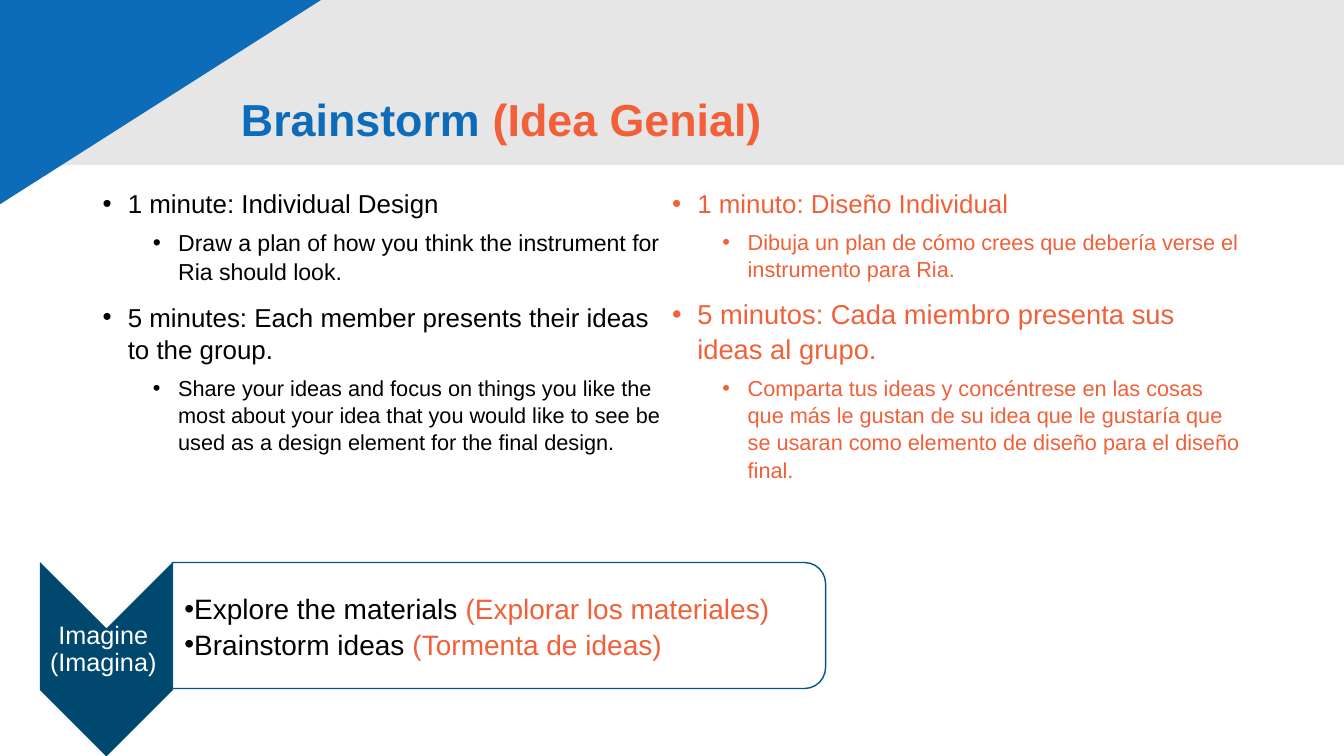
"""Build the bilingual brainstorm slide."""
from dataclasses import dataclass

from lxml import etree
from pptx import Presentation
from pptx.dml.color import RGBColor
from pptx.enum.shapes import MSO_SHAPE
from pptx.enum.text import MSO_ANCHOR, PP_ALIGN
from pptx.oxml.ns import qn
from pptx.util import Pt

CHEVRON = MSO_SHAPE.CHEVRON
PANEL = MSO_SHAPE.ROUND_2_SAME_RECTANGLE
RECT = MSO_SHAPE.RECTANGLE
LEFT, CENTER = PP_ALIGN.LEFT, PP_ALIGN.CENTER
TOP, MIDDLE = MSO_ANCHOR.TOP, MSO_ANCHOR.MIDDLE


@dataclass(frozen=True)
class Theme:
    """Colours, font and type sizes."""
    font: str = "Arial"
    blue: str = "0D6CB9"
    orange: str = "F16038"
    navy: str = "00486E"
    edge: str = "005786"
    gray: str = "E7E6E6"
    black: str = "000000"
    white: str = "FFFFFF"
    title: float = 32
    label: float = 18
    task: float = 20


THEME = Theme()

TITLE = [("Brainstorm ", THEME.blue), ("(Idea Genial)", THEME.orange)]
STEPS = [
    (THEME.black, [
        (0, 18.5, "1 minute: Individual Design"),
        (1, 16.5, "Draw a plan of how you think the instrument for Ria should look."),
        (0, 18.5, "5 minutes: Each member presents their ideas to the group."),
        (1, 15.5, "Share your ideas and focus on things you like the most about your "
                  "idea that you would like to see be used as a design element for "
                  "the final design."),
    ]),
    (THEME.orange, [
        (0, 18.5, "1 minuto: Diseño Individual"),
        (1, 15.5, "Dibuja un plan de cómo crees que debería verse el instrumento "
                  "para Ria."),
        (0, 19.5, "5 minutos: Cada miembro presenta sus ideas al grupo."),
        (1, 15.5, "Comparta tus ideas y concéntrese en las cosas que más le gustan "
                  "de su idea que le gustaría que se usaran como elemento de diseño "
                  "para el diseño final."),
    ]),
]
LABEL = "Imagine (Imagina)"
TASKS = [
    ("Explore the materials ", "(Explorar los materiales)"),
    ("Brainstorm ideas ", "(Tormenta de ideas)"),
]

WIDE, HIGH = 960, 540
BAND = 118
CORNER = [(0, 0), (229.3, 0), (0, 145.9)]
BODY_X, BODY_Y, BODY_H = 66.2, 129.6, 247
COL_W, INSET = 406.8, 7.2


def tint(color):
    """Return the colour for a hex code."""
    return RGBColor.from_string(color)


def paint(shape, fill, edge=None):
    """Give a shape its fill and outline, without shadow."""
    shape.shadow.inherit = False
    shape.fill.solid()
    shape.fill.fore_color.rgb = tint(fill)
    if edge:
        shape.line.color.rgb = tint(edge)
        shape.line.width = Pt(1)
    else:
        shape.line.fill.background()


def place(shapes, kind, mid_x, mid_y, wide, high, turn=0):
    """Add a preset shape around a centre point."""
    shape = shapes.add_shape(kind, Pt(mid_x - wide / 2), Pt(mid_y - high / 2),
                             Pt(wide), Pt(high))
    shape.rotation = turn
    return shape


def add_box(shapes, *area):
    """Add a text box from left, top, width and height."""
    return shapes.add_textbox(*map(Pt, area))


def write(frame, runs, *, size, first=True, bold=False, align=LEFT, anchor=TOP,
          inset=(7.2, 3.6, 7.2, 3.6), lines=1.0, before=0, margin=0, hang=0,
          bullet=False):
    """Write one formatted paragraph of (text, colour) runs."""
    frame.word_wrap = True
    frame.vertical_anchor = anchor
    (frame.margin_left, frame.margin_top,
     frame.margin_right, frame.margin_bottom) = map(Pt, inset)
    para = frame.paragraphs[0] if first else frame.add_paragraph()
    para.alignment = align
    para.line_spacing = lines
    para.space_before = Pt(0 if first else before)
    if bullet:
        props = para._p.get_or_add_pPr()
        props.set("marL", str(Pt(margin)))
        props.set("indent", str(Pt(-hang)))
        etree.SubElement(props, qn("a:buFont")).set("typeface", THEME.font)
        etree.SubElement(props, qn("a:buChar")).set("char", "•")
    for text, color in runs:
        run = para.add_run()
        run.text = text
        run.font.name = THEME.font
        run.font.size = Pt(size)
        run.font.bold = bold
        run.font.color.rgb = tint(color)


def add_head(slide):
    """Draw the band, the corner and the title."""
    shapes = slide.shapes
    paint(place(shapes, RECT, WIDE / 2, BAND / 2, WIDE, BAND), THEME.gray)
    path = shapes.build_freeform(*map(Pt, CORNER[0]), scale=1.0)
    path.add_line_segments([(Pt(x), Pt(y)) for x, y in CORNER[1:]], close=True)
    paint(path.convert_to_shape(), THEME.blue)
    title = shapes.title
    title.left, title.top, title.width, title.height = map(
        Pt, (164.9, 34.6, 698.4, 104.4))
    write(title.text_frame, TITLE, size=THEME.title, bold=True,
          anchor=MIDDLE, lines=0.9)
    shapes._spTree.append(title._element)


def add_steps(shapes):
    """Write the two columns of steps."""
    for col, (color, steps) in enumerate(STEPS):
        box = add_box(shapes, BODY_X + col * COL_W, BODY_Y,
                      COL_W + 2 * INSET, BODY_H)
        for row, (level, size, text) in enumerate(steps):
            write(box.text_frame, [(text, color)], size=size, first=row == 0,
                  lines=1.05, before=6 if level else 10,
                  margin=18 + 36 * level, hang=18, bullet=True)


def add_stage(shapes):
    """Draw the stage arrow with its label and tasks."""
    paint(place(shapes, CHEVRON, 76, 470.9, 139, 95, 90), THEME.navy)
    label = add_box(shapes, 28.1, 444, 91.4, 40)
    write(label.text_frame, [(LABEL, THEME.white)], size=THEME.label,
          align=CENTER, anchor=MIDDLE, inset=(1.4,) * 4, lines=0.92)
    paint(place(shapes, PANEL, 356.4, 446.8, 90, 466.6, 90),
          THEME.white, THEME.edge)
    tasks = add_box(shapes, 123.1, 406.1, 462.2, 81.4)
    for row, (english, spanish) in enumerate(TASKS):
        write(tasks.text_frame,
              [(english, THEME.black), (spanish, THEME.orange)],
              size=THEME.task, first=row == 0, anchor=MIDDLE,
              inset=(8.6, 0.7, 0.7, 0.7), lines=1.05, bullet=True)


def main():
    """Build and save the slide."""
    deck = Presentation()
    deck.slide_width, deck.slide_height = Pt(WIDE), Pt(HIGH)
    slide = deck.slides.add_slide(deck.slide_layouts[5])
    add_head(slide)
    add_steps(slide.shapes)
    add_stage(slide.shapes)
    deck.save("out.pptx")


if __name__ == "__main__":
    main()
